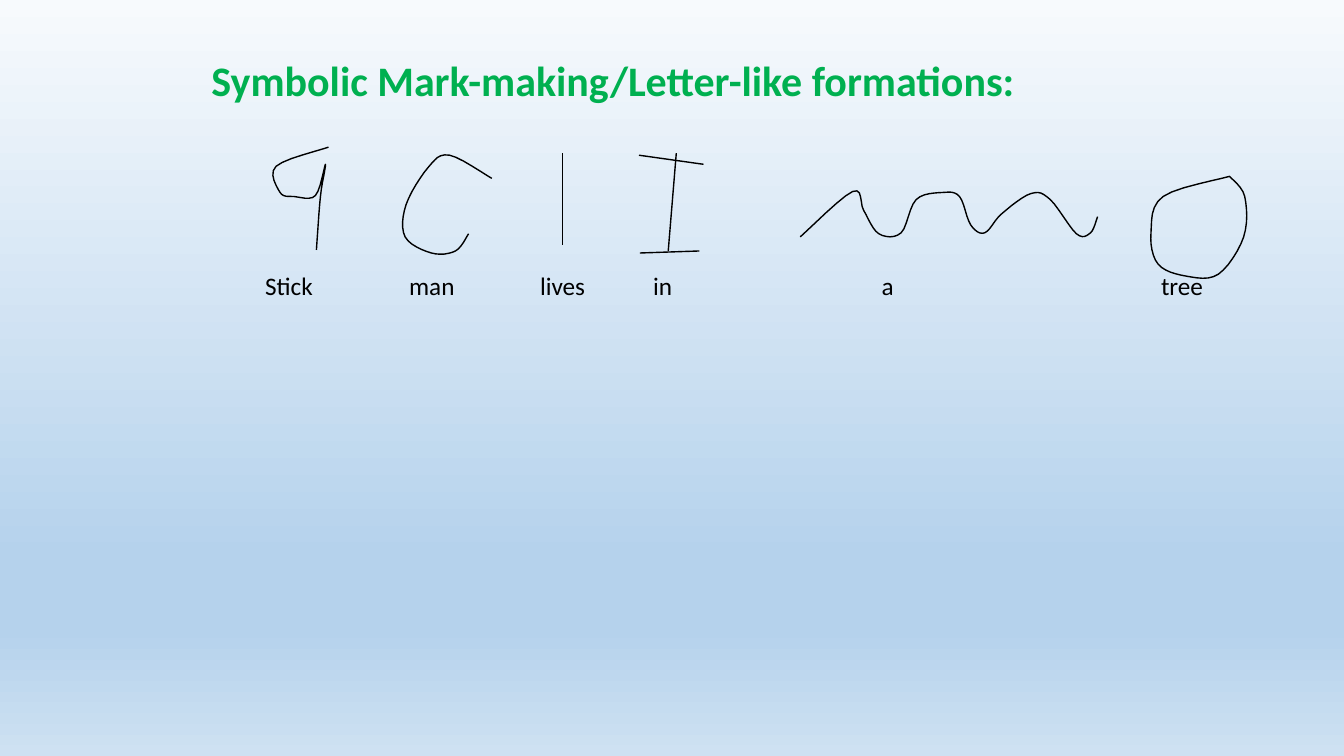
from lxml.etree import SubElement
from pptx import Presentation
from pptx.dml.color import RGBColor
from pptx.enum.shapes import MSO_CONNECTOR
from pptx.enum.text import MSO_AUTO_SIZE
from pptx.oxml.ns import qn
from pptx.util import Cm, Pt

BACKGROUND_STOPS = [(0, "F7FAFD"), (74, "B5D2EC"), (83, "B5D2EC"), (100, "CEE1F2")]
UNIT = 0.0254  # one stroke unit, in centimetres
STEPS = 6

# Points that the pen passes through; a smooth curve joins them.
CURVED_STROKES = {
    "stick": [(326, 146), (274, 165), (278, 191), (292, 195), (313, 194),
              (323, 163), (318, 195), (314, 248)],
    "man": [(488, 177), (446, 154), (425, 166), (403, 203), (402, 235),
            (428, 251), (452, 249), (465, 232)],
    "a": [(794, 235), (846, 190), (857, 209), (872, 232), (894, 231),
          (909, 198), (935, 191), (952, 195), (963, 223), (977, 231),
          (994, 212), (1023, 192), (1042, 198), (1068, 232), (1082, 231), (1089, 215)],
    "tree": [(1220, 175), (1154, 195), (1142, 231), (1149, 262), (1177, 274),
             (1209, 272), (1234, 235), (1235, 195), (1220, 175)],
}
STRAIGHT_STROKES = [
    (558, 152, 558, 243),  # lives
    (671, 152, 663, 249),  # in: stem, top bar, bottom bar
    (634, 154, 698, 163),
    (635, 251, 694, 249),
]


def color(hex_string):
    return RGBColor.from_string(hex_string)


def add_text(left, top, width, height, text, size, hex_string, bold=False, tab_stops=()):
    """Add a one-line text box, with tab stops in centimetres."""
    box = slide.shapes.add_textbox(Cm(left), Cm(top), Cm(width), Cm(height))
    frame = box.text_frame
    frame.word_wrap = True
    frame.auto_size = MSO_AUTO_SIZE.SHAPE_TO_FIT_TEXT
    frame.text = text
    paragraph = frame.paragraphs[0]
    if tab_stops:
        tab_list = SubElement(paragraph._p.get_or_add_pPr(), qn("a:tabLst"))
        for stop in tab_stops:
            SubElement(tab_list, qn("a:tab"), pos=str(Cm(stop)), algn="l")
    for run in paragraph.runs:
        run.font.name = "Calibri"
        run.font.size = Pt(size)
        run.font.bold = bold
        run.font.color.rgb = color(hex_string)


presentation = Presentation()
presentation.slide_width = Cm(33.87)
presentation.slide_height = Cm(19.05)
slide = presentation.slides.add_slide(presentation.slide_layouts[6])

# Background gradient, top to bottom
background = slide.background.fill
background.gradient()
background.gradient_angle = 270
stop_list = slide.element.find(".//" + qn("a:gsLst"))
stop_list.clear()
for percent, hex_string in BACKGROUND_STOPS:
    stop = SubElement(stop_list, qn("a:gs"), pos=str(percent * 1000))
    SubElement(stop, qn("a:srgbClr"), val=hex_string)

add_text(5.08, 1.24, 21.03, 1.54, "Symbolic Mark-making/Letter-like formations:",
         30, "00B050", bold=True)

# Handwritten marks: Catmull-Rom curves through the pen points
for pen_points in CURVED_STROKES.values():
    padded = [pen_points[0], *pen_points, pen_points[-1]]
    curve = [pen_points[0]]
    for before, start, end, after in zip(padded, padded[1:], padded[2:], padded[3:]):
        for step in range(1, STEPS + 1):
            t = step / STEPS
            curve.append([
                b + t * ((c - a) + t * ((2 * a - 5 * b + 4 * c - d)
                                        + t * (3 * b - 3 * c + d - a))) / 2
                for a, b, c, d in zip(before, start, end, after)
            ])
    # Ten drawing units per stroke unit keep the curves smooth
    curve = [(x * 10, y * 10) for x, y in curve]
    builder = slide.shapes.build_freeform(*curve[0], scale=Cm(UNIT) / 10)
    builder.add_line_segments(curve[1:], close=pen_points[0] == pen_points[-1])
    mark = builder.convert_to_shape()
    mark.shadow.inherit = False
    mark.fill.background()
    mark.line.color.rgb = color("000000")
    mark.line.width = Pt(1)

for stroke in STRAIGHT_STROKES:
    ends = [Cm(value * UNIT) for value in stroke]
    line = slide.shapes.add_connector(MSO_CONNECTOR.STRAIGHT, *ends)
    line.line.color.rgb = color("000000")
    line.line.width = Pt(1)
    SubElement(line._element.spPr, qn("a:effectLst"))

add_text(6.43, 6.68, 24.56, 1.03, "Stick\tman\tlives\tin\ta\ttree", 18, "000000",
         tab_stops=(3.63, 6.93, 9.78, 15.54, 22.58))

presentation.save("out.pptx")
